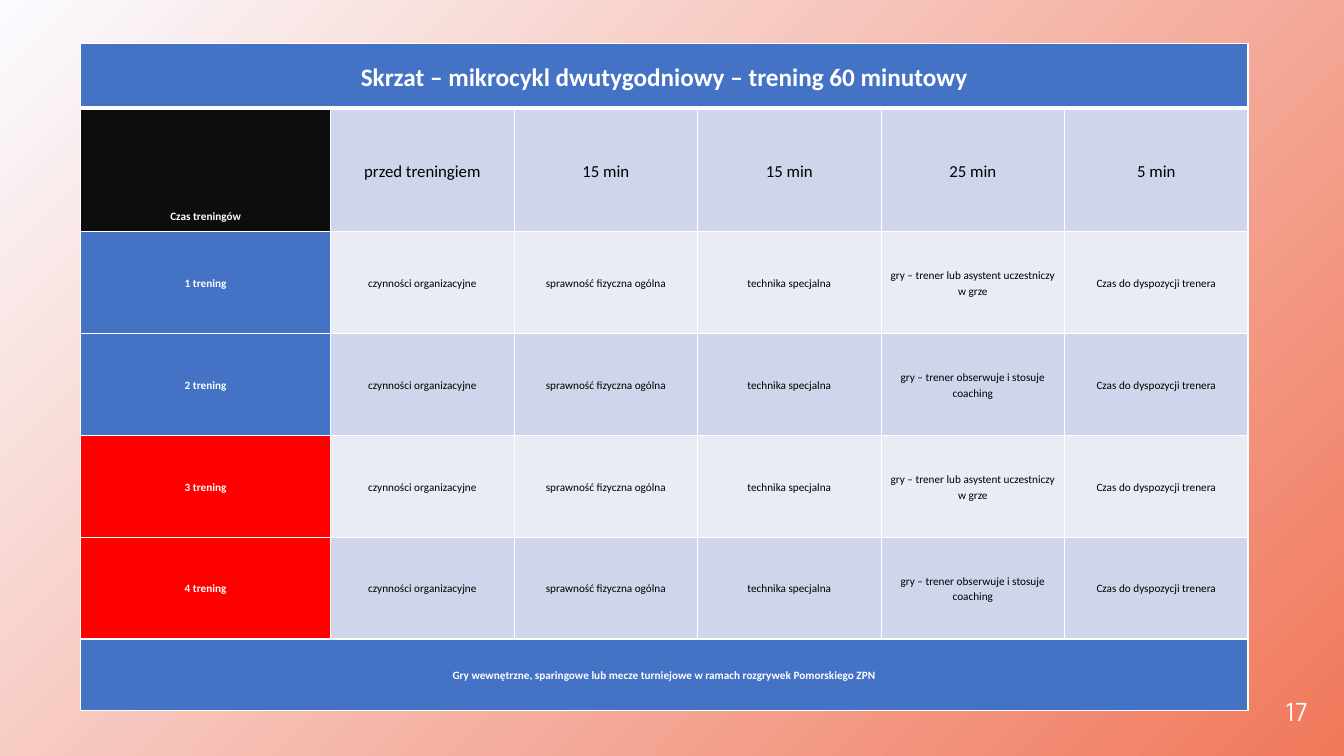
from lxml.etree import SubElement
from pptx import Presentation
from pptx.dml.color import RGBColor
from pptx.enum.text import MSO_ANCHOR as Anchor, PP_ALIGN as Align
from pptx.oxml.ns import qn
from pptx.util import Inches, Pt

BLUE, RED, BLACK, WHITE = "4472C4", "FF0000", "0D0D0D", "FFFFFF"
BANDS = ["CFD5EA", "E9EBF5"]


def add_run(para, text, size, color, font="Calibri", bold=False):
    span = para.add_run()
    span.text = text
    span.font.size = Pt(size)
    span.font.name = font
    span.font.bold = bold
    span.font.color.rgb = RGBColor.from_string(color)


def add_border(cell, side, width):
    """Draw a white line on one side of the cell: L, R, T or B."""
    line = SubElement(cell._tc.get_or_add_tcPr(), qn(f"a:ln{side}"), w=str(Pt(width)))
    SubElement(SubElement(line, qn("a:solidFill")), qn("a:srgbClr"), val=WHITE)


deck = Presentation()
deck.slide_width = Inches(13.33)
deck.slide_height = Inches(7.5)
page = deck.slides.add_slide(deck.slide_layouts[6])

backdrop = page.background.fill
backdrop.gradient()
backdrop.gradient_angle = 315
for stop, color in zip(backdrop.gradient_stops, ["FAFBFF", "F1785B"]):
    stop.color.rgb = RGBColor.from_string(color)

# Page number
box = page.shapes.add_textbox(Inches(12.38), Inches(6.91), Inches(0.59), Inches(0.3))
frame = box.text_frame
frame.word_wrap = True
frame.margin_left = frame.margin_right = frame.margin_top = frame.margin_bottom = 0
frame.paragraphs[0].alignment = Align.RIGHT
add_run(frame.paragraphs[0], "17", 18, "FAFBFF", font="Manrope")

# Training plan
title = "Skrzat – mikrocykl dwutygodniowy – trening 60 minutowy"
footer = "Gry wewnętrzne, sparingowe lub mecze turniejowe w ramach rozgrywek Pomorskiego ZPN"
times = ["przed treningiem", "15 min", "15 min", "25 min", "5 min"]
games = ["gry – trener lub asystent uczestniczy w grze",
         "gry – trener obserwuje i stosuje coaching"]
rows = [[title], ["Czas treningów"] + times]
for number in range(1, 5):
    rows.append([f"{number} trening", "czynności organizacyjne",
                 "sprawność fizyczna ogólna", "technika specjalna",
                 games[(number - 1) % 2], "Czas do dyspozycji trenera"])
rows.append([footer])
label_fills = [BLUE, BLACK, BLUE, BLUE, RED, RED, BLUE]
heights = [0.64, 1.23] + [1.01] * 4 + [0.71]
widths = [2.48] + [1.82] * 5

table = page.shapes.add_table(len(rows), len(widths), Inches(0.8), Inches(0.43),
                              Inches(11.57), Inches(6.63)).table
for column, width in zip(table.columns, widths):
    column.width = Inches(width)

for r, texts in enumerate(rows):
    table.rows[r].height = Inches(heights[r])
    if len(texts) == 1:
        table.cell(r, 0).merge(table.cell(r, len(widths) - 1))
    for c in range(len(widths)):
        cell = table.cell(r, c)
        add_border(cell, "L", 1)
        add_border(cell, "R", 1)
        add_border(cell, "T", 3 if r == 1 else 1)
        add_border(cell, "B", 3 if r == 0 else 1)
        is_label = c == 0 or len(texts) == 1
        cell.fill.solid()
        cell.fill.fore_color.rgb = RGBColor.from_string(
            label_fills[r] if is_label else BANDS[(r - 1) % 2])
        cell.vertical_anchor = Anchor.MIDDLE
        cell.margin_left = cell.margin_right = Inches(0.05)
        cell.margin_top = cell.margin_bottom = 0
        if c >= len(texts):
            continue
        para = cell.text_frame.paragraphs[0]
        para.alignment = Align.CENTER
        para.line_spacing = 1.15
        para.space_after = Pt(10)
        size = 18 if r == 0 else 12 if r == 1 and c > 0 else 8
        add_run(para, texts[c], size, WHITE if is_label else "000000", bold=is_label)

corner = table.cell(1, 0)
corner.vertical_anchor = Anchor.BOTTOM
corner.margin_bottom = Inches(0.08)

deck.save("out.pptx")
